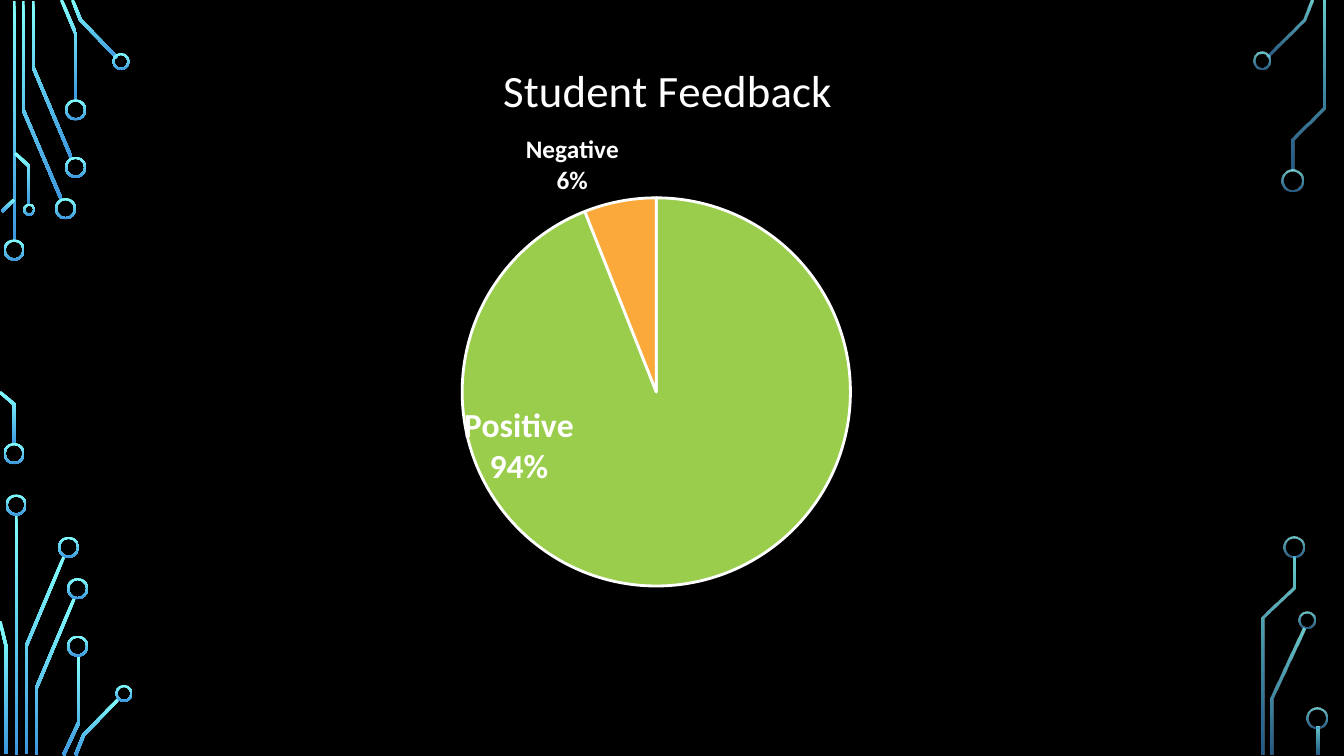
from dataclasses import dataclass
from itertools import pairwise
from math import hypot

from lxml.etree import SubElement
from pptx import Presentation
from pptx.chart.data import CategoryChartData
from pptx.dml.color import RGBColor
from pptx.enum.chart import XL_CHART_TYPE, XL_LABEL_POSITION
from pptx.enum.shapes import MSO_SHAPE
from pptx.oxml import parse_xml
from pptx.oxml.ns import nsdecls, qn
from pptx.util import Cm, Pt


@dataclass(frozen=True)
class Theme:
    """Colours, type sizes and line widths of the slide."""
    background: str = "000000"
    text: str = "FFFFFF"
    glow: tuple = ("82FFFF", "3D97DE")
    slices: tuple = ("9ACD4C", "FAA93A")
    font: str = "Calibri"
    title_size: int = 32
    large_label: int = 24
    small_label: int = 18
    trace_width: float = 0.03
    ring_width: float = 0.02


@dataclass(frozen=True)
class Box:
    """A region of the slide, in inches."""
    left: float
    top: float
    width: float
    height: float


THEME = Theme()
LEFT_TRACES = [
    [(0.14, 0.01), (0.14, 2.39)],
    [(0.23, 0.01), (0.23, 1.09), (0.61, 1.98)],
    [(0.33, 0.01), (0.33, 0.67), (0.71, 1.57)],
    [(0.61, 0), (0.75, 0.33), (0.75, 1)],
    [(0.72, 0), (0.8, 0.2), (1.16, 0.57)],
    [(0.02, 2.1), (0.14, 1.98)],
    [(0, 3.89), (0.14, 4.01), (0.14, 4.41)],
    [(0.15, 1.52), (0.29, 1.65), (0.29, 2.03)],
    [(0.16, 5.1), (0.16, 7.49)],
    [(0.26, 7.48), (0.26, 6.41), (0.64, 5.51)],
    [(0, 6.16), (0.06, 6.41), (0.06, 7.48)],
    [(0.36, 7.49), (0.36, 6.83), (0.74, 5.93)],
    [(0.63, 7.49), (0.78, 7.17), (0.78, 6.5)],
    [(0.75, 7.49), (0.83, 7.29), (1.18, 6.93)],
]
LEFT_RINGS = [
    (0.14, 2.48, 0.21), (0.14, 4.5, 0.21), (0.65, 2.07, 0.21), (0.75, 1.66, 0.21),
    (0.75, 1.09, 0.21), (1.2, 0.61, 0.17), (0.29, 2.08, 0.12), (0.16, 5.01, 0.21),
    (0.68, 5.43, 0.21), (0.77, 5.84, 0.21), (0.77, 6.41, 0.21), (1.23, 6.88, 0.17),
]
RIGHT_TRACES = [
    [(0.17, 0.56), (0.53, 0.2), (0.61, 0)],
    [(0.22, 7.49), (0.22, 6.93), (0.53, 6.23)],
    [(0.42, 1.69), (0.42, 1.38), (0.73, 1.07), (0.73, 0.01)],
    [(0.13, 7.49), (0.13, 6.13), (0.43, 5.83), (0.43, 5.52)],
    [(0.67, 7.21), (0.67, 7.49)],
]
RIGHT_RINGS = [
    (0.12, 0.6, 0.17), (0.42, 1.79, 0.21), (0.56, 6.15, 0.17),
    (0.43, 5.43, 0.21), (0.66, 7.12, 0.21),
]


def inches(value):
    """Convert inches to a length."""
    return Cm(value * 2.54)


def colour(code):
    """Turn a hex code into a colour."""
    return RGBColor.from_string(code)


def style_font(font, size, bold=False):
    """Apply the theme's typeface and text colour."""
    font.name, font.size, font.bold = THEME.font, Pt(size), bold
    font.color.rgb = colour(THEME.text)


def apply_glow(shape, opacities):
    """Fill a shape with the downward circuit gradient."""
    shape.shadow.inherit = False
    shape.line.fill.background()
    shape.fill.gradient()
    shape.fill.gradient_angle = 270
    for stop, code in zip(shape.fill.gradient_stops, THEME.glow):
        stop.color.rgb = colour(code)
    for tint, opacity in zip(shape._element.spPr.iter(qn("a:srgbClr")), opacities):
        SubElement(tint, qn("a:alpha"), val=str(opacity * 1000))


def band_outline(points, width):
    """Return the mitred outline of a band around a centre line."""
    normals = []
    for (x1, y1), (x2, y2) in pairwise(points):
        span = hypot(x2 - x1, y2 - y1)
        normals.append(((y1 - y2) / span, (x2 - x1) / span))
    near, far = [], []
    for (x, y), a, b in zip(points, normals[:1] + normals, normals + normals[-1:]):
        reach = width / 2 / (1 + a[0] * b[0] + a[1] * b[1])
        dx, dy = (a[0] + b[0]) * reach, (a[1] + b[1]) * reach
        near.append((x + dx, y + dy))
        far.append((x - dx, y - dy))
    return near + far[::-1]


def draw_circuit(page, box, traces, rings, opacities=(100, 100)):
    """Draw circuit traces and their ring ends inside a box."""
    for trace in traces:
        start, *rest = [(inches(box.left + x), inches(box.top + y))
                        for x, y in band_outline(trace, THEME.trace_width)]
        builder = page.shapes.build_freeform(*start)
        builder.add_line_segments(rest, close=True)
        apply_glow(builder.convert_to_shape(), opacities)
    for x, y, size in rings:
        ring = page.shapes.add_shape(
            MSO_SHAPE.DONUT, inches(box.left + x - size / 2),
            inches(box.top + y - size / 2), inches(size), inches(size))
        ring.adjustments[0] = THEME.ring_width / size
        apply_glow(ring, opacities)


def set_layout(parent, index, modes="", **places):
    """Give a chart part a manual layout in fractions of the chart."""
    for old in parent.findall(qn("c:layout")):
        parent.remove(old)
    layout = parse_xml(f"<c:layout {nsdecls('c')}><c:manualLayout/></c:layout>")
    if modes == "inner":
        SubElement(layout[0], qn("c:layoutTarget"), val="inner")
    if modes:
        for axis in "xy":
            SubElement(layout[0], qn(f"c:{axis}Mode"), val="edge")
    for name, value in places.items():
        SubElement(layout[0], qn(f"c:{name}"), val=str(value))
    parent.insert(index, layout)


def show_name_and_percent(labels):
    """Show category and percentage on two lines."""
    for name, shown in (("Val", 0), ("CatName", 1), ("Percent", 1)):
        labels.find(qn(f"c:show{name}")).set("val", str(shown))
    separator = parse_xml(f"<c:separator {nsdecls('c')}>\n</c:separator>")
    labels.find(qn("c:showBubbleSize")).addnext(separator)


def draw_feedback_chart(page, box):
    """Draw the feedback pie with its title and labels."""
    data = CategoryChartData()
    data.categories = ["Positive", "Negative"]
    data.add_series("Student Feedback", (94, 6))
    chart = page.shapes.add_chart(
        XL_CHART_TYPE.PIE, inches(box.left), inches(box.top),
        inches(box.width), inches(box.height), data).chart
    style_font(chart.font, 10)
    chart.has_legend = False
    chart.has_title = True
    heading = chart.chart_title.text_frame
    heading.text = "Student Feedback"
    style_font(heading.paragraphs[0].runs[0].font, THEME.title_size)

    plot = chart.plots[0]
    plot.vary_by_categories = True
    series = plot.series[0]
    for index, code in enumerate(THEME.slices):
        piece = series.points[index].format
        piece.fill.solid()
        piece.fill.fore_color.rgb = colour(code)
        piece.line.color.rgb = colour(THEME.text)
        piece.line.width = Pt(2)

    labels = series.data_labels
    style_font(labels.font, THEME.small_label, bold=True)
    labels.position = XL_LABEL_POSITION.OUTSIDE_END
    positive = series.points[0].data_label
    style_font(positive.font, THEME.large_label, bold=True)
    positive.position = XL_LABEL_POSITION.CENTER

    root = chart.element
    for group in root.xpath(".//c:ser/c:dLbls | .//c:ser/c:dLbls/c:dLbl"):
        show_name_and_percent(group)
    set_layout(root.xpath(".//c:title")[0], 1, "edge", x=0.35, y=0.05)
    set_layout(root.xpath(".//c:plotArea")[0], 0, "inner", x=0.32, y=0.27, w=0.35, h=0.58)
    set_layout(root.xpath(".//c:dLbl")[0], 1, x=-0.14, y=-0.06)


def main():
    """Build and save the feedback slide."""
    deck = Presentation()
    deck.slide_width, deck.slide_height = inches(13.33), inches(7.5)
    page = deck.slides.add_slide(deck.slide_layouts[6])
    page.background.fill.solid()
    page.background.fill.fore_color.rgb = colour(THEME.background)
    draw_circuit(page, Box(0, 0, 1.32, 7.5), LEFT_TRACES, LEFT_RINGS)
    draw_circuit(page, Box(12.4, 0, 0.8, 7.5), RIGHT_TRACES, RIGHT_RINGS, (80, 60))
    draw_feedback_chart(page, Box(1.05, 0.17, 11.03, 6.64))
    deck.save("out.pptx")


if __name__ == "__main__":
    main()
